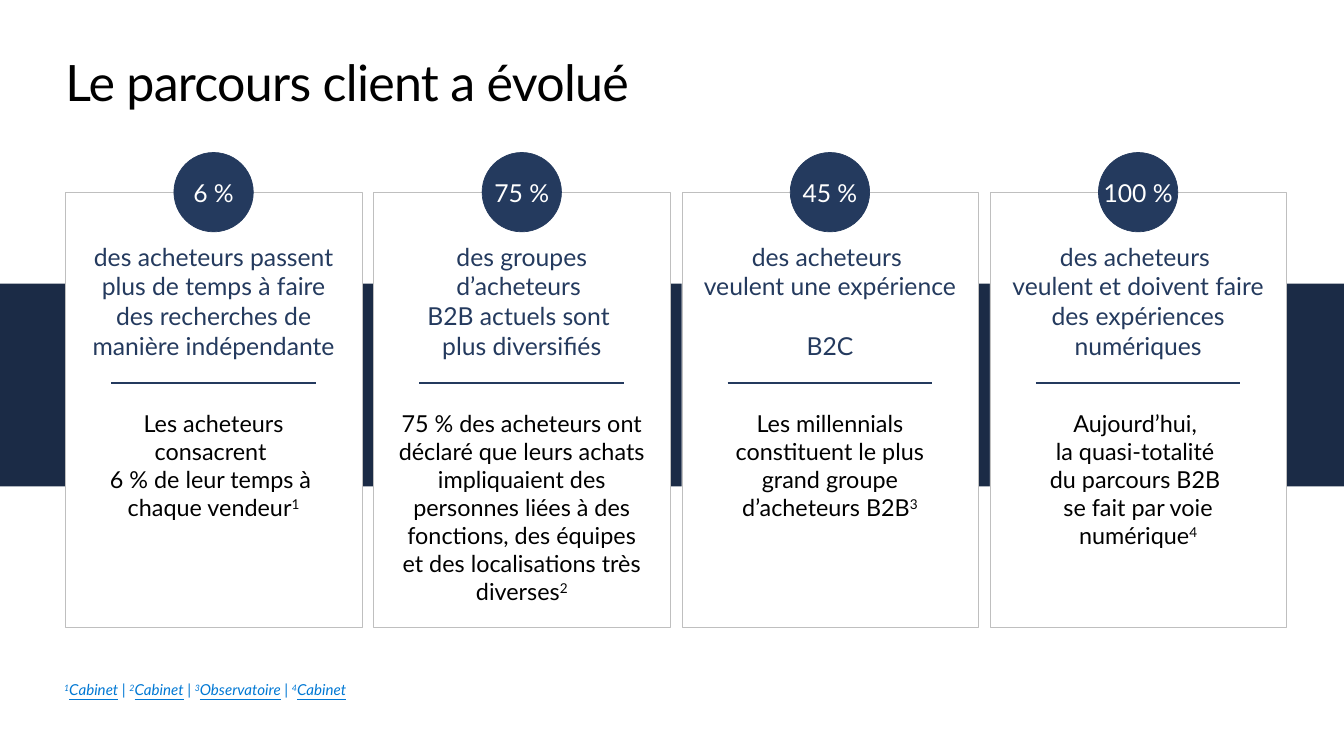
from pptx import Presentation
from pptx.dml.color import RGBColor
from pptx.enum.shapes import MSO_CONNECTOR, MSO_SHAPE
from pptx.enum.text import MSO_ANCHOR, PP_ALIGN
from pptx.util import Cm, Pt
from lxml import etree

RECTANGLE, OVAL = MSO_SHAPE.RECTANGLE, MSO_SHAPE.OVAL
STRAIGHT = MSO_CONNECTOR.STRAIGHT
TOP, MIDDLE = MSO_ANCHOR.TOP, MSO_ANCHOR.MIDDLE
LEFT, CENTER = PP_ALIGN.LEFT, PP_ALIGN.CENTER

BLACK = RGBColor(0x00, 0x00, 0x00)
WHITE = RGBColor(0xFF, 0xFF, 0xFF)
NAVY = RGBColor(0x24, 0x3A, 0x5E)
DARK_NAVY = RGBColor(0x1B, 0x2B, 0x46)
GREY = RGBColor(0xBF, 0xBF, 0xBF)
LINK_BLUE = RGBColor(0x00, 0x78, 0xD4)

A = "{http://schemas.openxmlformats.org/drawingml/2006/main}"


def write(shape, text, size, color, align=CENTER, anchor=TOP, wrap=True,
          insets=(0, 0, 0, 0), notes=(), italic=False, spacing=None, tracking=None):
    """Fill a shape; notes holds (superscript, underlined source, separator) triples."""
    frame = shape.text_frame
    frame.word_wrap = wrap
    frame.vertical_anchor = anchor
    (frame.margin_left, frame.margin_top,
     frame.margin_right, frame.margin_bottom) = [Cm(inset) for inset in insets]
    paragraph = frame.paragraphs[0]
    paragraph.text = text
    paragraph.alignment = align
    if spacing:
        paragraph.line_spacing = spacing
    for number, source, separator in notes:
        superscript = paragraph.add_run()
        superscript.text = number
        superscript.font._element.set("baseline", "30000")
        if source:
            name = paragraph.add_run()
            name.text = source
            name.font.underline = True
        if separator:
            paragraph.add_run().text = separator
    for run in paragraph.runs:
        run.font.name = "Lato"
        run.font.size = Pt(size)
        run.font.color.rgb = color
        if italic:
            run.font.italic = True
        if tracking:
            run.font._element.set("spc", str(tracking))


def add_block(kind, left, top, width, height, fill, line=None, line_width=0.5):
    block = slide.shapes.add_shape(kind, Cm(left), Cm(top), Cm(width), Cm(height))
    block.shadow.inherit = False
    block.fill.solid()
    block.fill.fore_color.rgb = fill
    if line is None:
        block.line.fill.background()
    else:
        block.line.color.rgb = line
        block.line.width = Pt(line_width)
    return block


prs = Presentation()
prs.slide_width, prs.slide_height = Cm(34.54), Cm(19.43)
slide = prs.slides.add_slide(prs.slide_layouts[5])

# Title
title = slide.shapes.title
title.left, title.top, title.width, title.height = Cm(1.68), Cm(1.3), Cm(31.22), Cm(1.57)
write(title, "Le parcours client a évolué", 36.5, BLACK, align=LEFT, anchor=MIDDLE, tracking=-50)

# Band behind the cards
add_block(RECTANGLE, 0, 7.29, 34.54, 5.21, DARK_NAVY)

# Cards: share, claim, detail, footnote number, wrapping of the detail
cards = [
    ("6 %",
     "des acheteurs passent plus de temps à faire des recherches de manière indépendante",
     "Les acheteurs consacrent \n6 % de leur temps à \nchaque vendeur", "1", False),
    ("75 %",
     "des groupes d’acheteurs \nB2B actuels sont \nplus diversifiés",
     "75 % des acheteurs ont déclaré que leurs achats impliquaient des personnes "
     "liées à des fonctions, des équipes et des localisations très diverses", "2", True),
    ("45 %",
     "des acheteurs \nveulent une expérience \nB2C",
     "Les millennials constituent le plus grand groupe d’acheteurs B2B", "3", True),
    ("100 %",
     "des acheteurs \nveulent et doivent faire des expériences numériques",
     "Aujourd’hui, \nla quasi-totalité \ndu parcours B2B \nse fait par voie numérique",
     "4", True),
]
CARD_LEFT, CARD_TOP, CARD_WIDTH, CARD_HEIGHT = 1.68, 4.94, 7.62, 11.18
CARD_PITCH = 7.92
CIRCLE, RULE_WIDTH, DETAIL_WIDTH = 2.04, 5.26, 6.4
RULE_TOP, DETAIL_TOP = 9.85, 10.52

for index, (share, claim, detail, number, wraps) in enumerate(cards):
    left = CARD_LEFT + index * CARD_PITCH
    middle = left + CARD_WIDTH / 2

    card = add_block(RECTANGLE, left, CARD_TOP, CARD_WIDTH, CARD_HEIGHT, WHITE, GREY, 0.25)
    write(card, claim, 18, NAVY, insets=(0.51, 1.27, 0.51, 0.41))

    circle = add_block(OVAL, middle - CIRCLE / 2, CARD_TOP - CIRCLE / 2, CIRCLE, CIRCLE,
                       NAVY, NAVY)
    write(circle, share, 18, WHITE, anchor=MIDDLE, wrap=False,
          insets=(0.51, 0.41, 0.51, 0.41))

    rule = slide.shapes.add_connector(
        STRAIGHT, Cm(middle - RULE_WIDTH / 2), Cm(RULE_TOP),
        Cm(middle + RULE_WIDTH / 2), Cm(RULE_TOP))
    rule.line.color.rgb = NAVY
    rule.line.width = Pt(1.5)
    etree.SubElement(rule._element.spPr, A + "effectLst")

    detail_box = slide.shapes.add_textbox(
        Cm(middle - DETAIL_WIDTH / 2), Cm(DETAIL_TOP), Cm(DETAIL_WIDTH), Cm(5.08))
    write(detail_box, detail, 17, BLACK, wrap=wraps, notes=[(number, "", "")])

# Sources
sources = slide.shapes.add_textbox(Cm(1.65), Cm(17.55), Cm(7.32), Cm(0.43))
write(sources, "", 11, LINK_BLUE, align=LEFT, wrap=False, italic=True, spacing=0.9,
      notes=[("1", "Cabinet", " | "), ("2", "Cabinet", " | "),
             ("3", "Observatoire", " | "), ("4", "Cabinet", "")])

prs.save("out.pptx")
